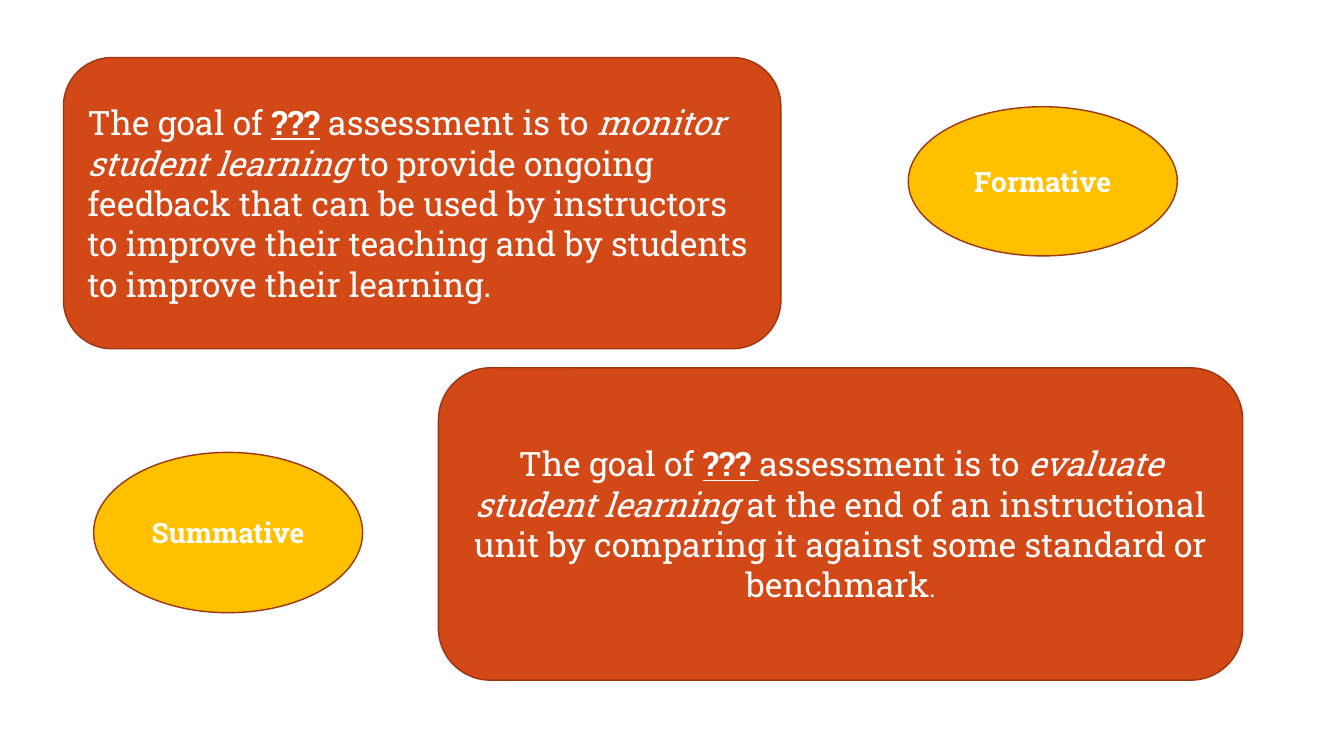
from dataclasses import dataclass

from pptx import Presentation
from pptx import util as u
from pptx.dml.color import RGBColor
from pptx.enum import shapes, text


@dataclass(frozen=True)
class Theme:
    font: str = "Roboto Slab"
    card: str = "D34817"
    answer: str = "FFC000"
    outline: str = "9C3511"
    ink: str = "FFFFFF"
    card_size: int = 24
    answer_size: int = 20
    stop_size: int = 18


class AssessmentSlide:
    def __init__(self, presentation, theme):
        self.theme = theme
        self.slide = presentation.slides.add_slide(presentation.slide_layouts[6])

    def add_filled_shape(self, kind, box, fill, align):
        """Draw an outlined shape and return its empty first paragraph."""
        shape = self.slide.shapes.add_shape(kind, *(u.Cm(length) for length in box))
        shape.shadow.inherit = False
        shape.fill.solid()
        shape.fill.fore_color.rgb = RGBColor.from_string(fill)
        shape.line.color.rgb = RGBColor.from_string(self.theme.outline)
        shape.line.width = u.Pt(1)
        frame = shape.text_frame
        frame.word_wrap = True
        frame.vertical_anchor = text.MSO_ANCHOR.MIDDLE
        paragraph = frame.paragraphs[0]
        paragraph.alignment = align
        return paragraph

    def add_run(self, paragraph, words, size, bold=False, italic=False, underline=False):
        run = paragraph.add_run()
        run.text = words
        font = run.font
        font.name = self.theme.font
        font.size = u.Pt(size)
        font.color.rgb = RGBColor.from_string(self.theme.ink)
        font.bold, font.italic, font.underline = bold, italic, underline

    def add_card(self, box, runs, align):
        """Add a rounded card; runs are (words, font options) pairs."""
        paragraph = self.add_filled_shape(
            shapes.MSO_SHAPE.ROUNDED_RECTANGLE, box, self.theme.card, align)
        for words, options in runs:
            self.add_run(paragraph, words, **{"size": self.theme.card_size, **options})

    def add_answer(self, box, word):
        paragraph = self.add_filled_shape(
            shapes.MSO_SHAPE.OVAL, box, self.theme.answer, text.PP_ALIGN.CENTER)
        self.add_run(paragraph, word, self.theme.answer_size, bold=True)


def main():
    presentation = Presentation()
    presentation.slide_width = u.Cm(33.87)
    presentation.slide_height = u.Cm(19.05)
    theme = Theme()
    slide = AssessmentSlide(presentation, theme)

    blank = {"bold": True, "underline": True}
    emphasis = {"italic": True}
    slide.add_card((1.6, 1.45, 18.08, 7.34), [
        ("The goal of ", {}),
        ("???", blank),
        (" assessment is to ", {}),
        ("monitor student learning", emphasis),
        (" to provide ongoing feedback that can be used by instructors to improve "
         "their teaching and by students to improve their learning.", {}),
    ], text.PP_ALIGN.LEFT)
    slide.add_card((11.05, 9.27, 20.27, 7.87), [
        ("The goal of ", {}),
        ("??? ", blank),
        ("assessment is to ", {}),
        ("evaluate student learning", emphasis),
        (" at the end of an instructional unit by comparing it against some "
         "standard or benchmark", {}),
        (".", {"size": theme.stop_size}),
    ], text.PP_ALIGN.CENTER)

    slide.add_answer((22.89, 2.69, 6.78, 3.76), "Formative")
    slide.add_answer((2.36, 11.4, 6.78, 4.04), "Summative")

    presentation.save("out.pptx")


if __name__ == "__main__":
    main()
